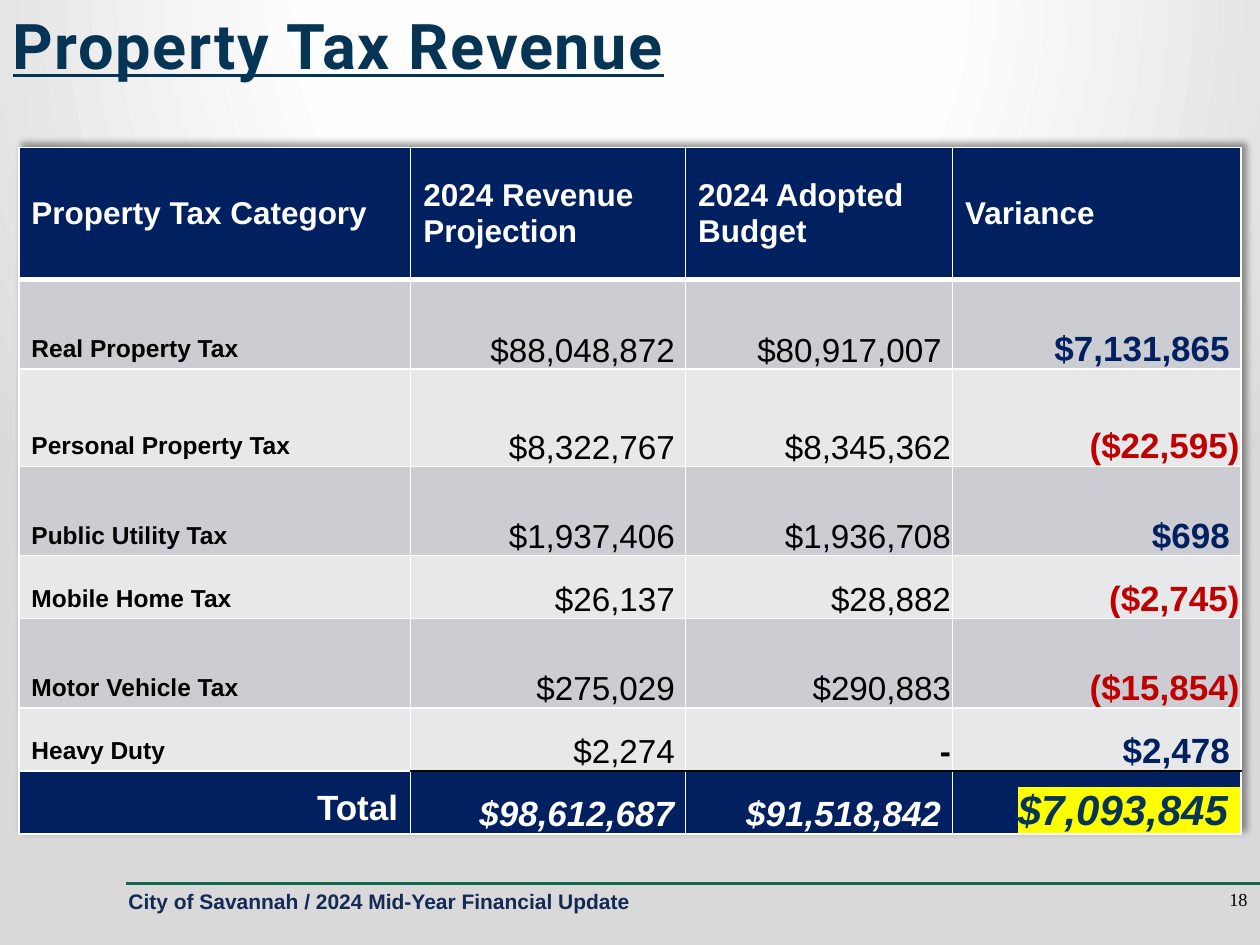
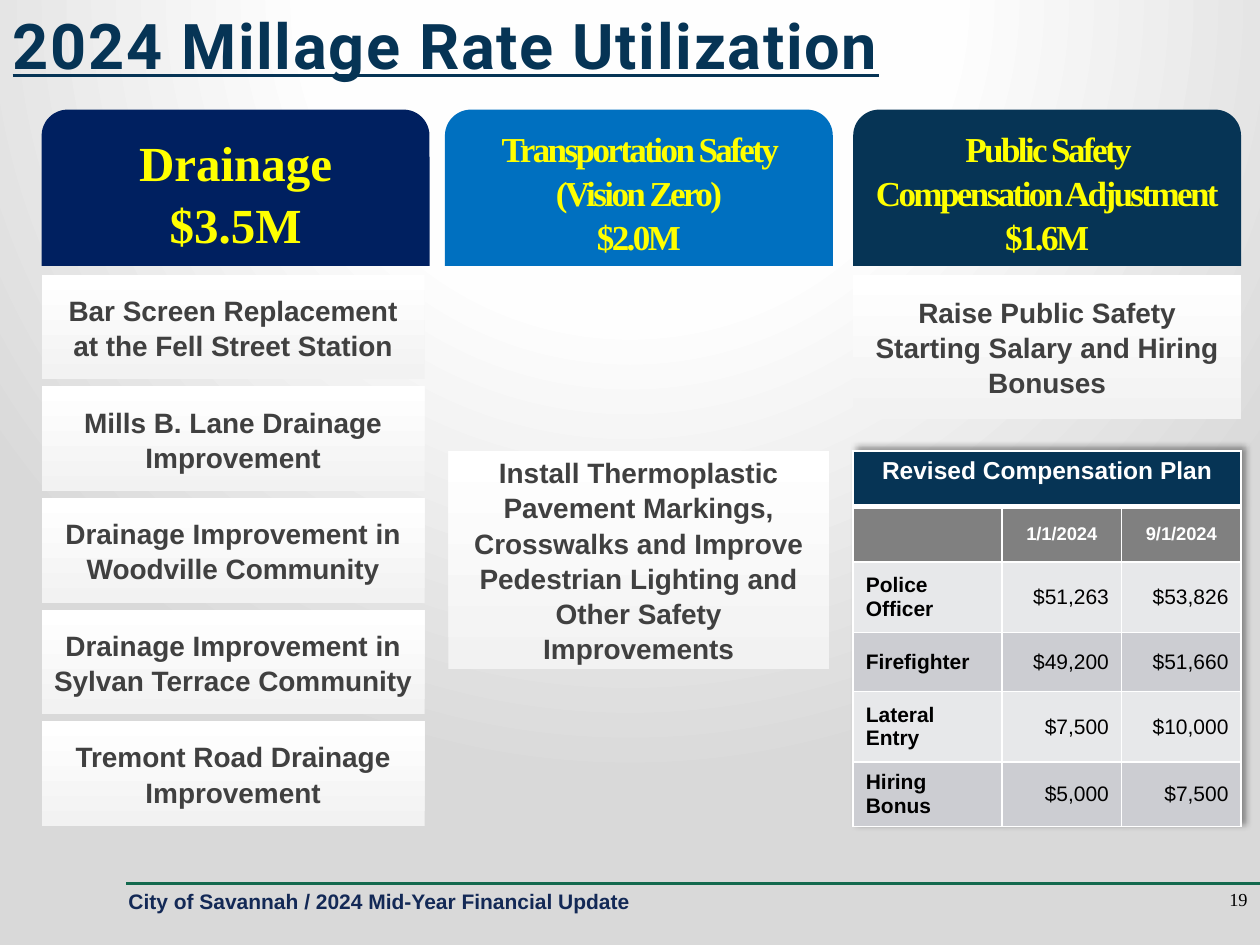
from lxml import etree
from pptx import Presentation
from pptx.dml.color import RGBColor
from pptx.enum.shapes import MSO_CONNECTOR as Connector, MSO_SHAPE as Shape
from pptx.enum.text import MSO_ANCHOR as Anchor, MSO_AUTO_SIZE as AutoSize, PP_ALIGN as Align
from pptx.oxml import parse_xml
from pptx.oxml.ns import nsdecls, qn
from pptx.util import Cm, Pt

NAVY, TEAL, BLUE = "002060", "063455", "0070C0"
FOOTER_BLUE, GREEN, RED, YELLOW = "132956", "13694E", "C00000", "FFFF00"
WHITE, BLACK, GRAY, DARK_GRAY = "FFFFFF", "000000", "808080", "404040"
CARD_GRAY = "F2F2F2"
BANDS = ("CCCDD2", "E7E8EA")
SANS, SERIF, TITLE_FONT = "Arial", "Times New Roman", "Roboto"

BACKGROUND = f"""<p:bg {nsdecls("p", "a")}><p:bgPr><a:gradFill rotWithShape="1"><a:gsLst>
<a:gs pos="0"><a:srgbClr val="FFFFFF"/></a:gs><a:gs pos="40000"><a:srgbClr val="FEFEFE"/></a:gs>
<a:gs pos="100000"><a:srgbClr val="D9D9D9"/></a:gs></a:gsLst>
<a:path path="circle"><a:fillToRect l="50000" t="-80000" r="50000" b="180000"/></a:path>
</a:gradFill><a:effectLst/></p:bgPr></p:bg>"""
TABLE_SHADOW = f"""<a:effectLst {nsdecls("a")}><a:outerShdw blurRad="50800" dist="38100"
dir="18900000" algn="bl" rotWithShape="0"><a:prstClr val="black"><a:alpha val="40000"/>
</a:prstClr></a:outerShdw></a:effectLst>"""


def rgb(color):
    return RGBColor.from_string(color)


class Deck:
    def __init__(self):
        self.presentation = Presentation()
        self.presentation.slide_width = Cm(25.4)
        self.presentation.slide_height = Cm(19.05)
        self.slide = None

    def add_slide(self, title, number, title_height):
        self.slide = self.presentation.slides.add_slide(self.presentation.slide_layouts[5])
        self.slide.element.cSld.insert(0, parse_xml(BACKGROUND))
        self.title(title, title_height)
        self.footer(number)

    def title(self, text, height):
        shape = self.slide.shapes.title
        shape.left, shape.top, shape.width, shape.height = Cm(0), Cm(0), Cm(20.96), Cm(height)
        frame = shape.text_frame
        frame.auto_size = AutoSize.NONE
        frame.vertical_anchor = Anchor.TOP
        self.fill_paragraph(frame.paragraphs[0], text, 36, TEAL, TITLE_FONT, spacing=1)
        frame.paragraphs[0].font.underline = True

    def footer(self, number):
        line = self.slide.shapes.add_connector(
            Connector.STRAIGHT, Cm(2.54), Cm(17.81), Cm(25.4), Cm(17.81))
        line.line.color.rgb = rgb(GREEN)
        line.line.width = Pt(1.5)
        etree.SubElement(line._element.spPr, qn("a:effectLst"))
        self.text(2.34, 12.7, "City of Savannah / 2024 Mid-Year Financial Update",
                  12, FOOTER_BLUE, SANS)
        self.text(22.23, 3.17, str(number), 10.5, BLACK, SERIF, bold=False, align=Align.RIGHT)

    def text(self, left, width, text, *style, **options):
        box = self.slide.shapes.add_textbox(Cm(left), Cm(17.78), Cm(width), Cm(1.27))
        box.text_frame.word_wrap = True
        self.fill_paragraph(box.text_frame.paragraphs[0], text, *style, **options)

    def fill_paragraph(self, paragraph, text, size, color, font=SANS, bold=True, italic=False,
                       align=Align.LEFT, spacing=None, highlight=None):
        paragraph.text = text
        paragraph.alignment = align
        paragraph.font.name = font
        paragraph.font.size = Pt(size)
        paragraph.font.bold = bold
        paragraph.font.italic = italic
        paragraph.font.color.rgb = rgb(color)
        if spacing:
            for run in paragraph.runs:
                run._r.get_or_add_rPr().set("spc", str(int(spacing * 100)))
        if highlight:
            properties = paragraph.runs[0]._r.get_or_add_rPr()
            mark = etree.SubElement(properties, qn("a:highlight"))
            etree.SubElement(mark, qn("a:srgbClr")).set("val", highlight)

    def block(self, kind, left, top, width, height, lines, size, color, font, spacing=None):
        """Add a shape without outline, with centred text, and return it."""
        shape = self.slide.shapes.add_shape(kind, Cm(left), Cm(top), Cm(width), Cm(height))
        shape.shadow.inherit = False
        shape.line.fill.background()
        frame = shape.text_frame
        frame.word_wrap = True
        frame.vertical_anchor = Anchor.MIDDLE
        for index, line in enumerate(lines):
            paragraph = frame.add_paragraph() if index else frame.paragraphs[0]
            self.fill_paragraph(paragraph, line, size, color, font,
                                align=Align.CENTER, spacing=spacing)
            paragraph.line_spacing = 1.05
        return shape

    def header(self, left, lines, fill, size, spacing=None):
        shape = self.block(Shape.ROUND_2_SAME_RECTANGLE, left, 2.21, 7.82, 3.15,
                           lines, size, YELLOW, SERIF, spacing)
        shape.fill.solid()
        shape.fill.fore_color.rgb = rgb(fill)

    def card(self, left, top, width, height, text):
        shape = self.block(Shape.RECTANGLE, left, top, width, height, [text], 16, DARK_GRAY, SANS)
        shape.fill.gradient()
        shape.fill.gradient_angle = 90
        for stop, color in zip(shape.fill.gradient_stops, (CARD_GRAY, WHITE)):
            stop.color.rgb = rgb(color)

    def table(self, left, top, widths, heights):
        table = self.slide.shapes.add_table(
            len(heights), len(widths), Cm(left), Cm(top), Cm(sum(widths)), Cm(sum(heights))).table
        for column, width in zip(table.columns, widths):
            column.width = Cm(width)
        for row, height in zip(table.rows, heights):
            row.height = Cm(height)
        table._tbl.tblPr.insert(0, parse_xml(TABLE_SHADOW))
        return table

    def cell(self, cell, text, fill, size, color, anchor=Anchor.MIDDLE, tight=False,
             top=(WHITE, 1), bottom=(WHITE, 1), **options):
        cell.fill.solid()
        cell.fill.fore_color.rgb = rgb(fill)
        cell.vertical_anchor = anchor
        if tight:
            cell.margin_left = cell.margin_right = cell.margin_top = Cm(0.03)
            cell.margin_bottom = Cm(0)
        if text:
            self.fill_paragraph(cell.text_frame.paragraphs[0], text, size, color, **options)
        edges = {"lnL": (WHITE, 1), "lnR": (WHITE, 1), "lnT": top, "lnB": bottom}
        for index, (edge, (edge_color, width)) in enumerate(edges.items()):
            cell._tc.get_or_add_tcPr().insert(index, parse_xml(
                f'<a:{edge} {nsdecls("a")} w="{width * 12700}"><a:solidFill>'
                f'<a:srgbClr val="{edge_color}"/></a:solidFill></a:{edge}>'))


def revenue_slide(deck):
    deck.add_slide("Property Tax Revenue", 18, 3.17)
    headings = ("Property Tax Category", "2024 Revenue Projection", "2024 Adopted Budget", "Variance")
    taxes = (
        ("Real Property Tax", "$88,048,872 ", "$80,917,007 ", "$7,131,865 "),
        ("Personal Property Tax", "$8,322,767 ", "$8,345,362", "($22,595)"),
        ("Public Utility Tax", "$1,937,406 ", "$1,936,708", "$698 "),
        ("Mobile Home Tax", "$26,137 ", "$28,882", "($2,745)"),
        ("Motor Vehicle Tax", "$275,029 ", "$290,883", "($15,854)"),
        ("Heavy Duty", "$2,274 ", "-", "$2,478 "),
    )
    totals = ("Total", "$98,612,687 ", "$91,518,842 ", "$7,093,845 ")
    table = deck.table(0.38, 2.97, (7.9, 5.54, 5.38, 5.82),
                       (2.67, 1.8, 1.96, 1.8, 1.27, 1.8, 1.27, 1.27))
    thin, thick, rule = (WHITE, 1), (WHITE, 3), (BLACK, 1)

    # Heading row
    for column, heading in enumerate(headings):
        deck.cell(table.cell(0, column), heading, NAVY, 18, WHITE, bottom=thick)

    # One row per tax
    for row, (name, *amounts) in enumerate(taxes, 1):
        fill = BANDS[(row - 1) % 2]
        top = thick if row == 1 else thin
        bottom = rule if row == len(taxes) else thin
        deck.cell(table.cell(row, 0), name, fill, 14, BLACK, Anchor.BOTTOM, top=top)
        for column, amount in enumerate(amounts, 1):
            variance = column == 3
            color = (RED if amount.startswith("(") else NAVY) if variance else BLACK
            deck.cell(table.cell(row, column), amount, fill, 20 if variance else 19, color,
                      Anchor.BOTTOM, tight=True, top=top, bottom=bottom,
                      bold=variance or amount == "-", align=Align.RIGHT)

    # Total row
    for column, total in enumerate(totals):
        grand = column == 3
        deck.cell(table.cell(7, column), total, NAVY, 24 if grand else 20,
                  TEAL if grand else WHITE, Anchor.BOTTOM, tight=column > 0,
                  top=rule if column else thin, italic=column > 0, align=Align.RIGHT,
                  highlight=YELLOW if grand else None)


def millage_slide(deck):
    deck.add_slide("2024 Millage Rate Utilization", 19, 1.8)
    drainage, transport, safety = 0.84, 8.97, 17.2

    # Column headers
    deck.header(drainage, ("Drainage", "$3.5M"), NAVY, 28)
    deck.header(transport, ("Transportation Safety (Vision Zero)\v$2.0M",), BLUE, 20, -1.5)
    deck.header(safety, ("Public Safety Compensation Adjustment", "$1.6M"), TEAL, 20, -1.5)

    # Cards
    projects = (
        "Bar Screen Replacement at the Fell Street Station",
        "Mills B. Lane Drainage Improvement",
        "Drainage Improvement in Woodville Community",
        "Drainage Improvement in Sylvan Terrace Community",
        "Tremont Road Drainage Improvement",
    )
    for index, project in enumerate(projects):
        deck.card(drainage, 5.54 + 2.25 * index, 7.72, 2.11, project)
    deck.card(9.04, 9.09, 7.67, 4.39, "Install Thermoplastic Pavement Markings, Crosswalks and "
              "Improve Pedestrian Lighting and Other Safety Improvements")
    deck.card(safety, 5.54, 7.82, 2.9, "Raise Public Safety Starting Salary and Hiring Bonuses")

    # Compensation table
    pay = (
        ("Police Officer", "$51,263", "$53,826"),
        ("Firefighter", "$49,200", "$51,660"),
        ("Lateral Entry", "$7,500", "$10,000"),
        ("Hiring Bonus", "$5,000", "$7,500"),
    )
    table = deck.table(safety, 9.09, (3, 2.41, 2.41), (1.12, 1.12, 1.42, 1.19, 1.42, 1.3))
    thick = (WHITE, 3)
    for column, heading in enumerate(("Revised Compensation Plan", "", "")):
        deck.cell(table.cell(0, column), heading, TEAL, 14, WHITE, Anchor.TOP,
                  bottom=thick, align=Align.CENTER)
    table.cell(0, 0).merge(table.cell(0, 2))
    for column, date in enumerate(("", "1/1/2024", "9/1/2024")):
        deck.cell(table.cell(1, column), date, GRAY, 10.5, WHITE, top=thick, align=Align.CENTER)
    for row, values in enumerate(pay, 2):
        for column, value in enumerate(values):
            deck.cell(table.cell(row, column), value, BANDS[(row + 1) % 2], 12, BLACK,
                      bold=column == 0, align=Align.RIGHT if column else Align.LEFT)


def main():
    deck = Deck()
    revenue_slide(deck)
    millage_slide(deck)
    deck.presentation.save("out.pptx")


if __name__ == "__main__":
    main()
